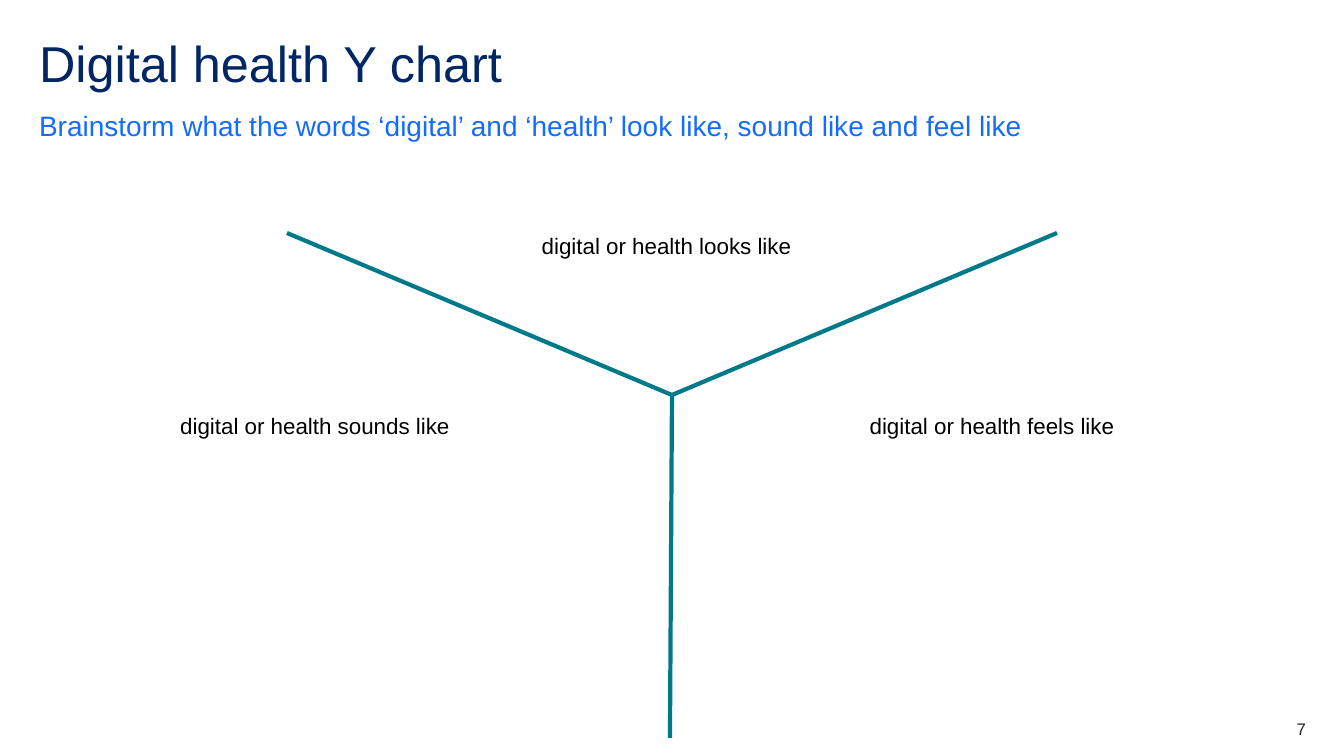
from lxml.etree import SubElement
from pptx import Presentation
from pptx.dml.color import RGBColor
from pptx.enum.shapes import MSO_CONNECTOR
from pptx.enum.text import MSO_ANCHOR, PP_ALIGN
from pptx.oxml.ns import qn
from pptx.util import Emu, Pt

PX = 914400 / 100.8
NAVY, BLUE, TEAL, BLACK, GREY = "002664", "146CFD", "007A8A", "000000", "22272B"


def px(n):
    """Turn pixels into EMU."""
    return Emu(round(n * PX))


def rgb(value):
    """Turn a hex string into a colour."""
    return RGBColor.from_string(value)


def write(sp, box, text, size, color, insets=(0, 0, 0, 0), anchor=MSO_ANCHOR.TOP, **para):
    """Place a text shape in its box and fill it with one formatted paragraph."""
    for name, n in zip(("left", "top", "width", "height"), box):
        setattr(sp, name, px(n))
    tf = sp.text_frame
    for side, n in zip(("left", "top", "right", "bottom"), insets):
        setattr(tf, f"margin_{side}", px(n))
    tf.word_wrap = True
    tf.vertical_anchor = anchor
    p = tf.paragraphs[0]
    for name, value in ({"alignment": PP_ALIGN.LEFT} | para).items():
        setattr(p, name, value)
    r = p.add_run()
    r.text = text
    for name, value in {"name": "Arial", "size": Pt(size)}.items():
        setattr(r.font, name, value)
    r.font.color.rgb = rgb(color)


def textbox(s, box, *args, **kwargs):
    """Add a text box and write into it."""
    write(s.shapes.add_textbox(0, 0, 0, 0), box, *args, **kwargs)


def header(s, x, y, w):
    """Add the title and the subtitle below it."""
    write(s.shapes.title, (x, y, w, 60), "Digital health Y chart", 36, NAVY,
          line_spacing=0.9)
    textbox(s, (x, y + 69, w, 34),
            "Brainstorm what the words ‘digital’ and ‘health’ look like, sound like and feel like",
            20, BLUE, anchor=MSO_ANCHOR.BOTTOM, line_spacing=1.5, space_after=Pt(12))


def y_chart(s, x, y, w, h):
    """Draw the three arms of the Y and label the areas between them."""
    hub_x, hub_y = x + w // 2, y + 162
    for end_x, end_y in ((hub_x - 2, y + h), (x + w, y), (x, y)):
        line = s.shapes.add_connector(MSO_CONNECTOR.STRAIGHT,
                                      *map(px, (hub_x, hub_y, end_x, end_y)))
        line.line.color.rgb = rgb(TEAL)
        line.line.width = Pt(3)
        SubElement(line._element.spPr, qn("a:effectLst"))
    labels = (
        ("sounds", (x - 179, hub_y + 17, 414, 42), 0),
        ("looks", (x + 116, y - 14, 527, 59), 13),
        ("feels", (x + 498, hub_y + 17, 414, 56), 0),
    )
    for sense, box, top in labels:
        textbox(s, box, f"digital or health {sense} like", 16, BLACK,
                insets=(13, top, 13, 13), alignment=PP_ALIGN.CENTER)


def page_number(s, x, y, w, h):
    """Add the page number."""
    textbox(s, (x, y, w, h), "7", 12, GREY, alignment=PP_ALIGN.RIGHT)


def main():
    """Build and save the slide."""
    prs = Presentation()
    prs.slide_width, prs.slide_height = px(1344), px(756)
    s = prs.slides.add_slide(prs.slide_layouts[5])
    header(s, 39, 39, 1266)
    y_chart(s, 287, 233, 770, 505)
    page_number(s, 1227, 719, 79, 20)
    prs.save("out.pptx")


if __name__ == "__main__":
    main()
